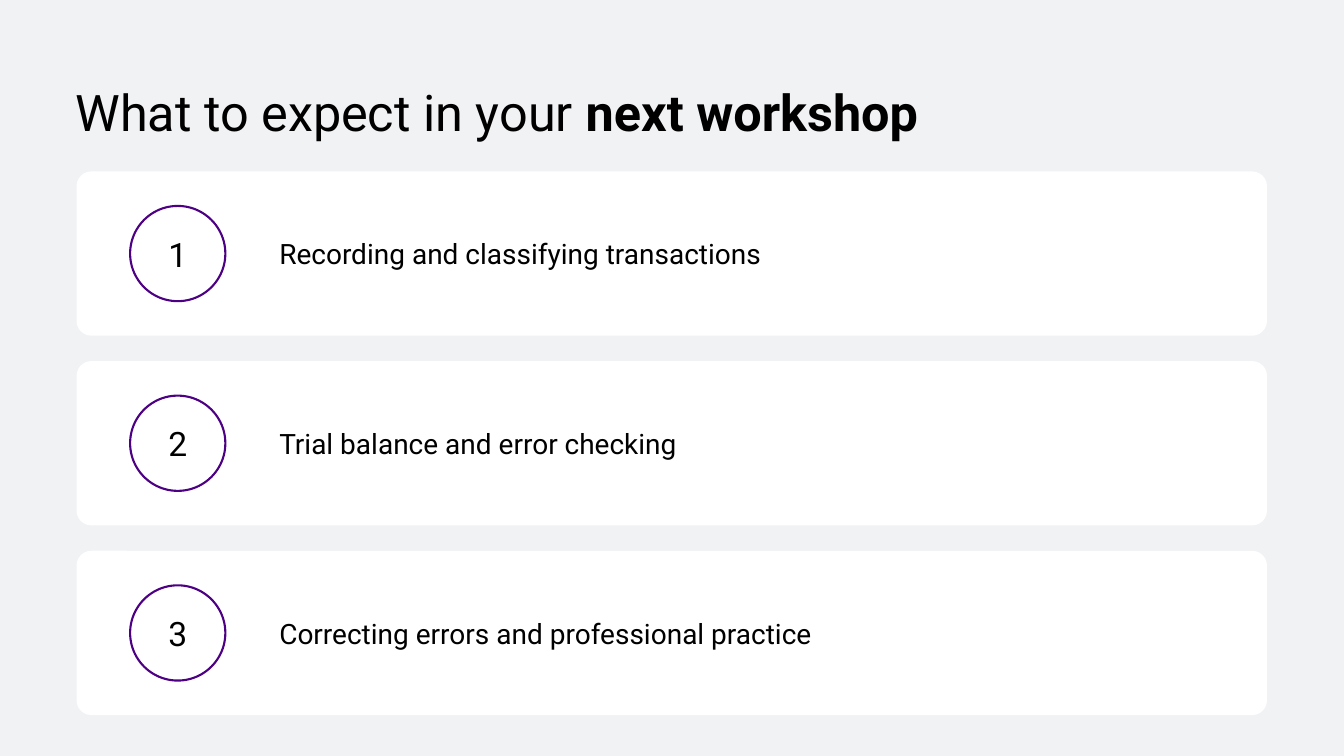
from dataclasses import dataclass

from pptx import Presentation
from pptx.dml.color import RGBColor
from pptx.enum.shapes import MSO_SHAPE as Preset
from pptx.enum.text import MSO_ANCHOR as Anchor, PP_ALIGN as Align
from pptx.shapes.autoshape import Shape
from pptx.slide import Slide
from pptx.util import Cm, Pt

FONT = "Roboto"
BLACK = "000000"
WHITE = "FFFFFF"
PURPLE = "4D0083"
BACKGROUND = "F1F2F4"

CARD_LEFT, CARD_TOP = 1.93, 4.32
CARD_WIDTH, CARD_HEIGHT = 30, 4.14
CARD_PITCH = 4.78
CIRCLE_LEFT, CIRCLE_SIZE = 3.28, 2.4


@dataclass(frozen=True)
class Topic:
    number: int
    text: str

    @property
    def top(self) -> float:
        return CARD_TOP + (self.number - 1) * CARD_PITCH


TOPICS = [
    Topic(1, "Recording and classifying transactions"),
    Topic(2, "Trial balance and error checking"),
    Topic(3, "Correcting errors and professional practice"),
]


def paint(target, color: str) -> None:
    if hasattr(target, "solid"):
        target.solid()
        target = target.fore_color
    target.rgb = RGBColor.from_string(color)


def write(box: Shape, text: str, *, size: float, bold: bool = False,
          align: Align = Align.LEFT) -> None:
    frame = box.text_frame
    frame.word_wrap = True
    frame.vertical_anchor = Anchor.MIDDLE
    para = frame.paragraphs[0]
    para.alignment = align
    span = para.add_run()
    span.text = text
    span.font.name = FONT
    span.font.size = Pt(size)
    span.font.bold = bold
    paint(span.font.color, BLACK)


def add_title(page: Slide) -> None:
    box = page.shapes.add_textbox(Cm(1.65), Cm(1.9), Cm(27.56), Cm(1.8))
    write(box, "What to expect in your ", size=36)
    write(box, "next workshop", size=36, bold=True)


def add_panel(page: Slide, preset: Preset, left: float, top: float,
              width: float, height: float) -> Shape:
    panel = page.shapes.add_shape(preset, Cm(left), Cm(top), Cm(width), Cm(height))
    panel.shadow.inherit = False
    paint(panel.fill, WHITE)
    return panel


def add_topic(page: Slide, topic: Topic) -> None:
    card = add_panel(page, Preset.ROUNDED_RECTANGLE, CARD_LEFT, topic.top,
                     CARD_WIDTH, CARD_HEIGHT)
    card.adjustments[0] = 0.09
    card.line.fill.background()
    frame = card.text_frame
    frame.margin_left = Cm(5)
    frame.margin_top = frame.margin_right = frame.margin_bottom = Cm(2)
    write(card, topic.text, size=20)

    circle_top = topic.top + (CARD_HEIGHT - CIRCLE_SIZE) / 2
    circle = add_panel(page, Preset.OVAL, CIRCLE_LEFT, circle_top,
                       CIRCLE_SIZE, CIRCLE_SIZE)
    paint(circle.line.fill, PURPLE)
    circle.line.width = Pt(1.5)
    write(circle, str(topic.number), size=24, align=Align.CENTER)


def main() -> None:
    deck = Presentation()
    deck.slide_width, deck.slide_height = Cm(33.87), Cm(19.05)
    page = deck.slides.add_slide(deck.slide_layouts[6])
    paint(page.background.fill, BACKGROUND)
    add_title(page)
    for topic in TOPICS:
        add_topic(page, topic)
    deck.save("out.pptx")


if __name__ == "__main__":
    main()
